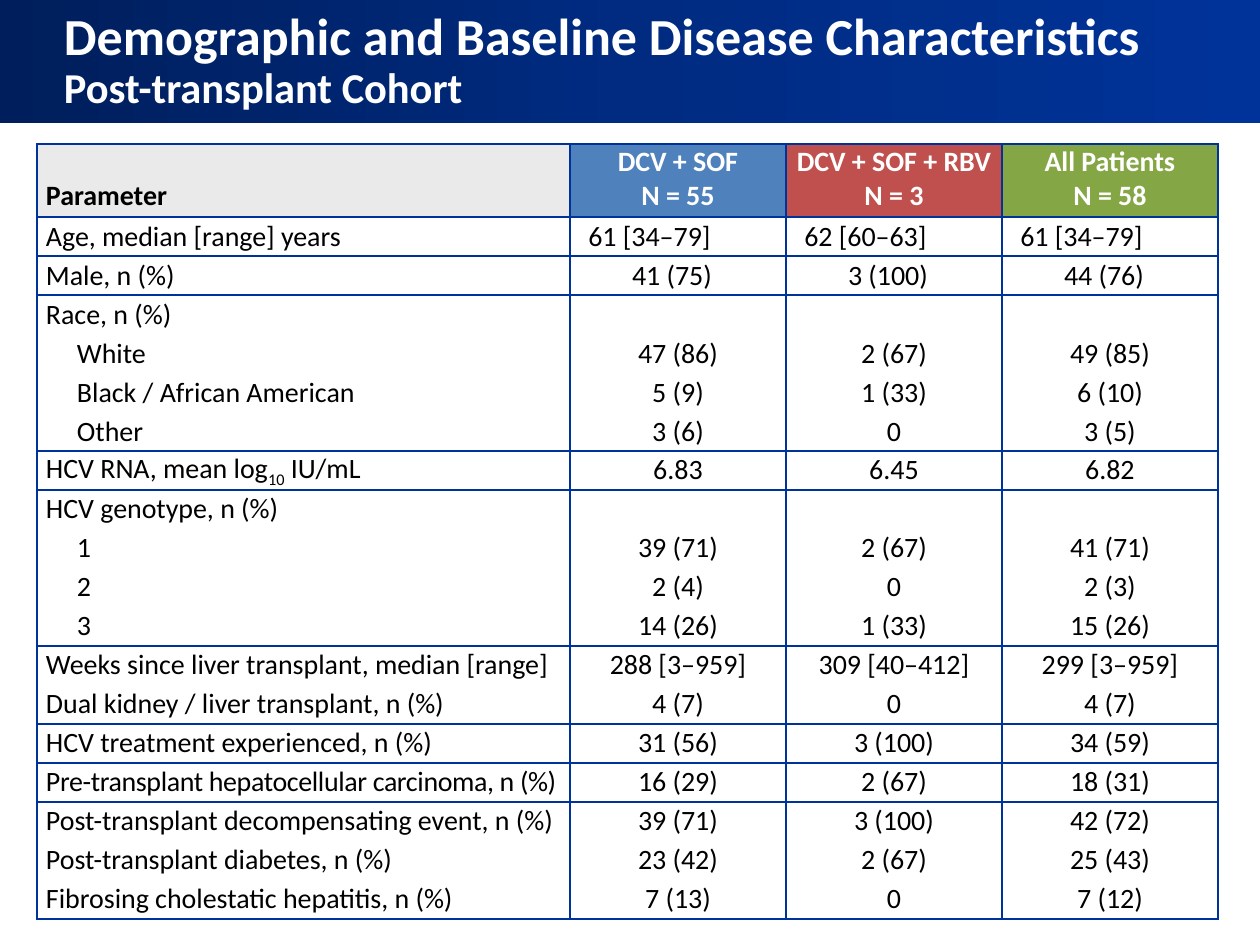
from copy import deepcopy

from lxml.etree import SubElement
from pptx import Presentation
from pptx.dml.color import RGBColor
from pptx.enum.shapes import MSO_SHAPE
from pptx.enum.text import MSO_ANCHOR, PP_ALIGN
from pptx.oxml.ns import qn
from pptx.util import Emu, Pt

NAVY = RGBColor(0x00, 0x1E, 0x5B)
ROYAL = RGBColor(0x00, 0x2B, 0x81)
BLUE = RGBColor(0x00, 0x33, 0x99)
WHITE = RGBColor(0xFF, 0xFF, 0xFF)
BLACK = RGBColor(0x00, 0x00, 0x00)
GRAY = RGBColor(0xEA, 0xEA, 0xEA)
STEEL = RGBColor(0x4F, 0x81, 0xBD)
RED = RGBColor(0xC0, 0x50, 0x4D)
GREEN = RGBColor(0x85, 0xA6, 0x44)

HEADS = [
    ("Parameter", GRAY, BLACK),
    ("DCV + SOF\nN = 55", STEEL, WHITE),
    ("DCV + SOF + RBV\nN = 3", RED, WHITE),
    ("All Patients\nN = 58", GREEN, WHITE),
]
GROUPS = [
    [("Age, median [range] years", "61 [34–79]", "62 [60–63]", "61 [34–79]")],
    [("Male, n (%)", "41 (75)", "3 (100)", "44 (76)")],
    [
        ("Race, n (%)", "", "", ""),
        ("White", "47 (86)", "2 (67)", "49 (85)"),
        ("Black / African American", "5 (9)", "1 (33)", "6 (10)"),
        ("Other", "3 (6)", "0", "3 (5)"),
    ],
    [("HCV RNA, mean log_10_ IU/mL", "6.83", "6.45", "6.82")],
    [
        ("HCV genotype, n (%)", "", "", ""),
        ("1", "39 (71)", "2 (67)", "41 (71)"),
        ("2", "2 (4)", "0", "2 (3)"),
        ("3", "14 (26)", "1 (33)", "15 (26)"),
    ],
    [
        ("Weeks since liver transplant, median [range]",
         "288 [3–959]", "309 [40–412]", "299 [3–959]"),
        ("Dual kidney / liver transplant, n (%)", "4 (7)", "0", "4 (7)"),
    ],
    [("HCV treatment experienced, n (%)", "31 (56)", "3 (100)", "34 (59)")],
    [("Pre-transplant hepatocellular carcinoma, n (%)",
      "16 (29)", "2 (67)", "18 (31)")],
    [
        ("Post-transplant decompensating event, n (%)",
         "39 (71)", "3 (100)", "42 (72)"),
        ("Post-transplant diabetes, n (%)", "23 (42)", "2 (67)", "25 (43)"),
        ("Fibrosing cholestatic hepatitis, n (%)", "7 (13)", "0", "7 (12)"),
    ],
]
SHIFTS = {"Age, median [range] years": 57, "Male, n (%)": 12}
TIGHT = "Pre-transplant hepatocellular carcinoma, n (%)"


def px(count):
    return Emu(round(count * 914400 / 126))


def put(thing, values):
    for name, value in values.items():
        setattr(thing, name, value)


def write(para, text, size, color, bold):
    run = para.add_run()
    run.text = text
    put(run.font, {"name": "Calibri", "size": Pt(size), "bold": bold})
    run.font.color.rgb = color
    return run


def title(slide, left, top, width, height):
    box = slide.shapes.add_shape(
        MSO_SHAPE.RECTANGLE, px(left), px(top), px(width), px(height))
    box.shadow.inherit = False
    box.line.fill.background()
    box.fill.gradient()
    box.fill.gradient_angle = 0
    first, last = box.fill.gradient_stops
    first.color.rgb, last.color.rgb = ROYAL, BLUE
    stops = box._element.spPr.find(".//" + qn("a:gsLst"))
    stops.insert(1, deepcopy(stops[0]))
    stops[1].set("pos", "50000")
    first.color.rgb = NAVY
    put(box.text_frame, {
        "word_wrap": True, "vertical_anchor": MSO_ANCHOR.MIDDLE,
        "margin_left": px(64), "margin_right": px(54),
        "margin_top": px(6), "margin_bottom": px(6),
    })
    para = box.text_frame.paragraphs[0]
    put(para, {"alignment": PP_ALIGN.LEFT, "line_spacing": 0.9})
    write(para, "Demographic and Baseline Disease Characteristics",
          29.7, WHITE, True)
    para.add_line_break()
    write(para, "Post-transplant Cohort", 24.3, WHITE, True)


def frame(cell, above, below):
    props = cell._tc.get_or_add_tcPr()
    for side, shown in (("L", True), ("R", True), ("T", above), ("B", below)):
        line = SubElement(props, qn("a:ln" + side), w=str(Pt(1)))
        if shown:
            fill = SubElement(line, qn("a:solidFill"))
            SubElement(fill, qn("a:srgbClr"), val=str(BLUE))
        else:
            SubElement(line, qn("a:noFill"))


def fill_cell(cell, text, fill, ink, bold, align, values):
    cell.fill.solid()
    cell.fill.fore_color.rgb = fill
    put(cell, {
        "margin_left": px(9), "margin_right": px(9),
        "margin_top": 0, "margin_bottom": 0,
        "vertical_anchor": MSO_ANCHOR.MIDDLE, **values,
    })
    for i, words in enumerate(text.split("\n")):
        body = cell.text_frame
        para = body.add_paragraph() if i else body.paragraphs[0]
        para.alignment = align
        for j, part in enumerate(words.split("_")):
            run = write(para, part, 16, ink, bold)
            if j == 1:
                run.font._element.set("baseline", "-25000")
            if text == TIGHT:
                run.font._element.set("spc", "-20")


def grid(slide, left, top, width, height):
    count = sum(map(len, GROUPS)) + 1
    table = slide.shapes.add_table(
        count, len(HEADS), px(left), px(top), px(width), px(height)).table
    table.horz_banding = False
    step = 216
    row = 39
    for i, col in enumerate(table.columns):
        col.width = px(step if i else width - 3 * step)
    for i, line in enumerate(table.rows):
        line.height = px(row if i else height - (count - 1) * row)
    aligns = [PP_ALIGN.LEFT] + [PP_ALIGN.CENTER] * 3
    for i, (text, fill, ink) in enumerate(HEADS):
        cell = table.cell(0, i)
        frame(cell, True, True)
        fill_cell(cell, text, fill, ink, True, aligns[i], {
            "vertical_anchor": MSO_ANCHOR.BOTTOM, "margin_bottom": px(4)})
    at = 0
    for group in GROUPS:
        nested = not group[0][1]
        for k, texts in enumerate(group):
            at += 1
            for i, text in enumerate(texts):
                cell = table.cell(at, i)
                frame(cell, k == 0, k == len(group) - 1)
                values = {}
                if i == 0 and k and nested:
                    values["margin_left"] = px(40)
                if i:
                    values["margin_right"] = px(9 + SHIFTS.get(texts[0], 0))
                fill_cell(cell, text, WHITE, BLACK, False, aligns[i], values)


def main():
    deck = Presentation()
    put(deck, {"slide_width": px(1260), "slide_height": px(945)})
    slide = deck.slides.add_slide(deck.slide_layouts[6])
    title(slide, 0, 0, 1260, 123)
    grid(slide, 37, 144, 1181, 775)
    deck.save("out.pptx")


if __name__ == "__main__":
    main()
